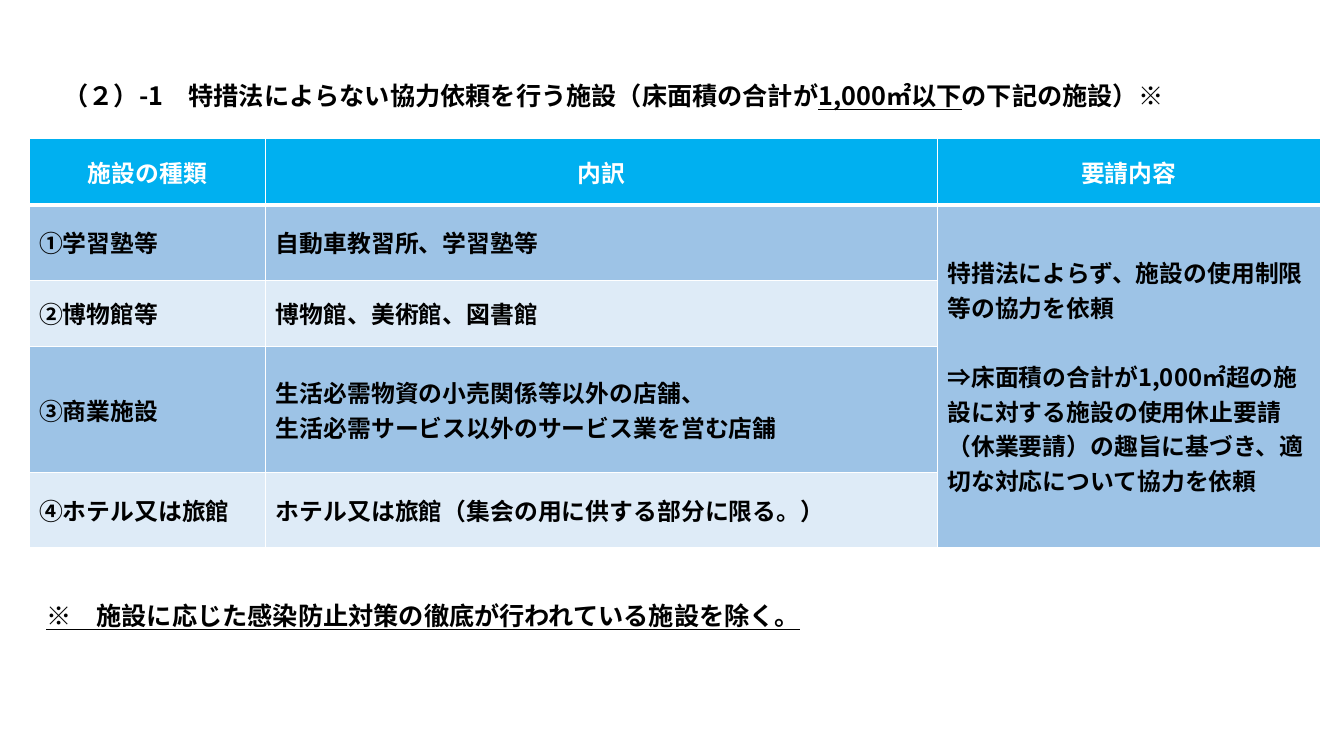
from pptx import Presentation, util as u
from pptx.dml.color import RGBColor
from pptx.enum import text as t
from pptx.oxml import parse_xml
from pptx.oxml.ns import nsdecls

# Content
TITLE = [("（２）-1　特措法によらない協力依頼を行う施設（床面積の合計が", True, False),
         ("1,000㎡以下", True, True),
         ("の下記の施設）※", True, False)]
NOTE = [("　", False, False),
        ("※　施設に応じた感染防止対策の徹底が行われている施設を除く。", True, True)]
HEAD = ("施設の種類", "内訳", "要請内容")
ROWS = [("①学習塾等", "自動車教習所、学習塾等"),
        ("②博物館等", "博物館、美術館、図書館"),
        ("③商業施設", "生活必需物資の小売関係等以外の店舗、\n"
                  "生活必需サービス以外のサービス業を営む店舗"),
        ("④ホテル又は旅館", "ホテル又は旅館（集会の用に供する部分に限る。）")]
ASK = ("特措法によらず、施設の使用制限等の協力を依頼\n"
       "⇒床面積の合計が1,000㎡超の施設に対する施設の使用休止要請"
       "（休業要請）の趣旨に基づき、適切な対応について協力を依頼")

# Look
FONT = "Noto Sans CJK JP"
BLACK = RGBColor(0, 0, 0)
WHITE = RGBColor(255, 255, 255)
CYAN = RGBColor(0x00, 0xB0, 0xF0)
BLUE = RGBColor(0x9D, 0xC3, 0xE6)
PALE = RGBColor(0xDE, 0xEB, 0xF7)
WIDTHS = (5.97, 16.92, 9.65)
HEIGHTS = (1.67, 1.9, 1.68, 3.17, 1.89)


def style(run, size, color, bold=True, under=False):
    font = run.font
    font.size, font.bold, font.underline = u.Pt(size), bold, under
    font.color.rgb = color
    font.name = FONT
    run._r.get_or_add_rPr().find("{*}latin").addnext(
        parse_xml(f'<a:ea {nsdecls("a")} typeface="{FONT}"/>'))


def add_line(left, top, width, parts):
    box = slide.shapes.add_textbox(u.Cm(left), u.Cm(top), u.Cm(width), u.Cm(1.03))
    frame = box.text_frame
    frame.word_wrap = True
    frame.auto_size = t.MSO_AUTO_SIZE.SHAPE_TO_FIT_TEXT
    for words, bold, under in parts:
        run = frame.paragraphs[0].add_run()
        run.text = words
        style(run, 18, BLACK, bold, under)


def add_edges(cell, row):
    thick = {"T": 3 if row == 1 else 1, "B": 3 if row == 0 else 1}
    props = cell._tc.get_or_add_tcPr()
    for i, side in enumerate("LRTB"):
        props.insert(i, parse_xml(
            f'<a:ln{side} {nsdecls("a")} w="{u.Pt(thick.get(side, 1))}">'
            f'<a:solidFill><a:srgbClr val="{WHITE}"/></a:solidFill></a:ln{side}>'))


def fill_cell(row, col, words):
    cell = table.cell(row, col)
    cell.text_frame.text = words
    cell.vertical_anchor = t.MSO_ANCHOR.MIDDLE
    for para in cell.text_frame.paragraphs:
        para.alignment = t.PP_ALIGN.LEFT if row else t.PP_ALIGN.CENTER
        for run in para.runs:
            style(run, 17, BLACK if row else WHITE)


deck = Presentation()
deck.slide_width, deck.slide_height = u.Cm(33.87), u.Cm(19.05)
slide = deck.slides.add_slide(deck.slide_layouts[6])

# Title
add_line(1.35, 1.9, 32.53, TITLE)

# Table
table = slide.shapes.add_table(
    len(HEIGHTS), len(WIDTHS), u.Cm(0.73), u.Cm(3.49),
    u.Cm(sum(WIDTHS)), u.Cm(sum(HEIGHTS))).table
for col, width in zip(table.columns, WIDTHS):
    col.width = u.Cm(width)
for r, height in enumerate(HEIGHTS):
    table.rows[r].height = u.Cm(height)
    for c in range(len(WIDTHS)):
        cell = table.cell(r, c)
        cell.fill.solid()
        cell.fill.fore_color.rgb = CYAN if r == 0 else BLUE if r % 2 else PALE
        add_edges(cell, r)
for r, row in enumerate([HEAD] + ROWS):
    for c, words in enumerate(row):
        fill_cell(r, c, words)

# Request shared by all rows
table.cell(1, 2).merge(table.cell(len(ROWS), 2))
fill_cell(1, 2, ASK)
table.cell(1, 2).text_frame.paragraphs[1].space_before = u.Pt(24.7)

# Footnote
add_line(0.28, 15.01, 29.13, NOTE)

deck.save("out.pptx")
